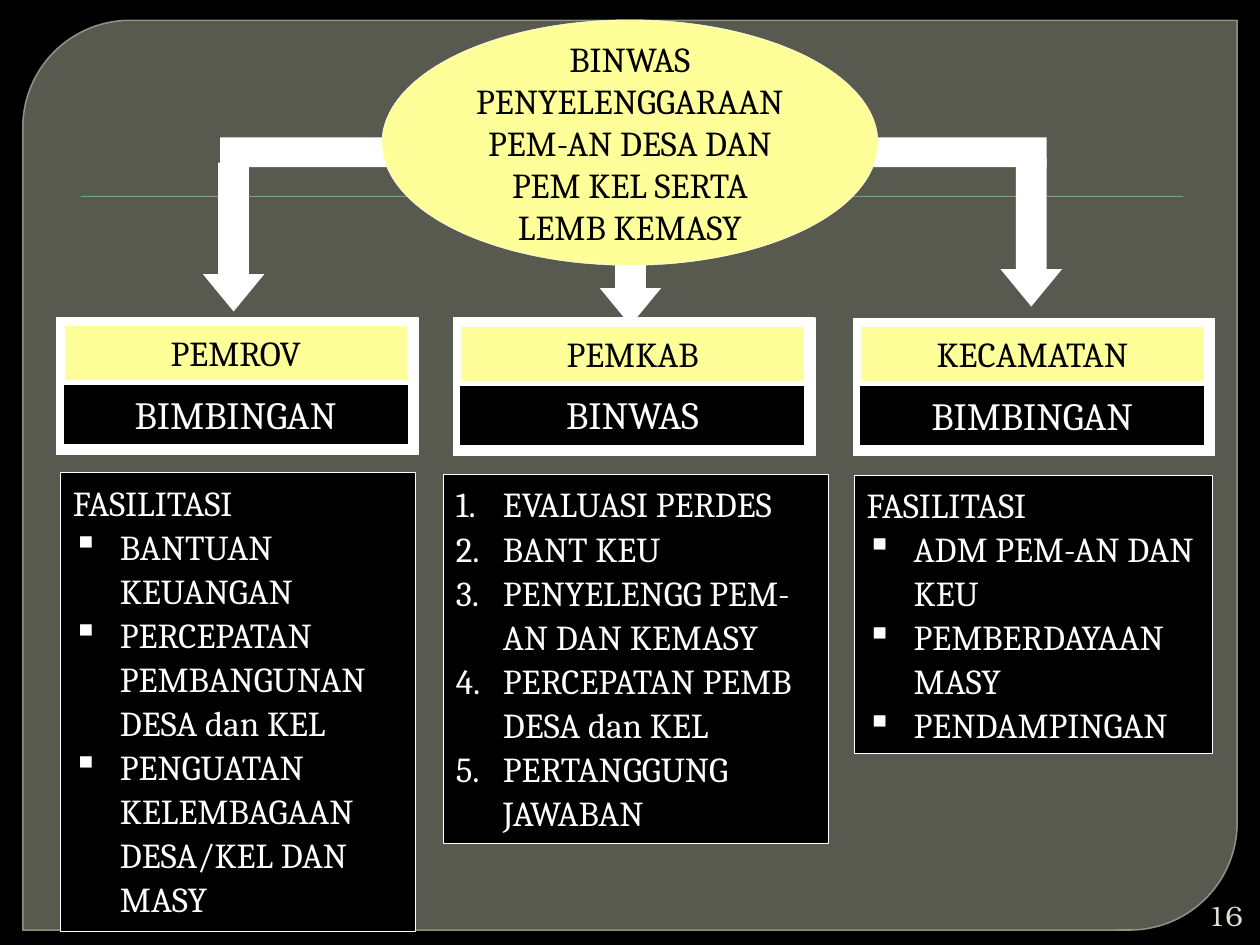
from lxml import etree
from pptx import Presentation
from pptx import util as u
from pptx.dml.color import RGBColor
from pptx.enum import shapes, text
from pptx.oxml.ns import qn

THEME = {
    "black": "000000", "white": "FFFFFF", "yellow": "FFFF99",
    "panel": "888B7B", "panel_line": "9DA090", "rule": "72A376", "number": "E0E0D4",
    "font": "Cambria", "number_font": "TeX Gyre Bonum",
    "body": 20, "role": 22, "number_size": 16,
}

# Content; geometry in centimetres
TOPIC = "BINWAS PENYELENGGARAAN PEM-AN DESA DAN PEM KEL SERTA LEMB KEMASY"
PAGE_NUMBER = "16"
COLUMNS = [
    {"level": "PEMROV", "role": "BIMBINGAN", "heading": "FASILITASI", "list": "bullet",
     "items": ["BANTUAN KEUANGAN", "PERCEPATAN PEMBANGUNAN DESA dan KEL",
               "PENGUATAN KELEMBAGAAN DESA/KEL DAN MASY"],
     "card": (1.14, 6.4), "arrow": (4.09, 3.28), "panel": (1.22, 9.53, 7.16, 9.25)},
    {"level": "PEMKAB", "role": "BINWAS", "heading": None, "list": "number",
     "items": ["EVALUASI PERDES", "BANT KEU", "PENYELENGG PEM-AN DAN KEMASY",
               "PERCEPATAN PEMB DESA dan KEL", "PERTANGGUNG JAWABAN"],
     "card": (9.14, 6.41), "arrow": (12.09, 3.56), "panel": (8.94, 9.57, 7.75, 7.44)},
    {"level": "KECAMATAN", "role": "BIMBINGAN", "heading": "FASILITASI", "list": "bullet",
     "items": ["ADM PEM-AN DAN KEU", "PEMBERDAYAAN MASY", "PENDAMPINGAN"],
     "card": (17.2, 6.42), "arrow": (20.17, 3.18), "panel": (17.22, 9.58, 7.21, 5.61)},
]
CARD_SIZE = (7.29, 2.77)
ARROW_SIZE = (1.24, 3.0)
INDENT = 0.95

SHAPE = shapes.MSO_SHAPE
ALIGN = text.PP_ALIGN
ANCHOR = text.MSO_ANCHOR


def color(name):
    return RGBColor.from_string(THEME[name])


def set_alpha(color_format_owner, percent):
    """Give the solid colour inside an element an opacity."""
    node = next(color_format_owner.iter(qn("a:srgbClr")))
    etree.SubElement(node, qn("a:alpha")).set("val", str(percent * 1000))


def add_box(slide, kind, box, fill, line=None, width=0.75):
    shape = slide.shapes.add_shape(kind, *(u.Cm(value) for value in box))
    shape.shadow.inherit = False
    shape.fill.solid()
    shape.fill.fore_color.rgb = color(fill)
    if line:
        shape.line.color.rgb = color(line)
        shape.line.width = u.Pt(width)
    else:
        shape.line.fill.background()
    return shape


def set_list(paragraph, style):
    properties = paragraph._p.get_or_add_pPr()
    properties.set("marL", str(u.Cm(INDENT)))
    properties.set("indent", str(-u.Cm(INDENT)))
    if style == "bullet":
        etree.SubElement(properties, qn("a:buChar")).set("char", "▪")
    elif style == "number":
        etree.SubElement(properties, qn("a:buAutoNum")).set("type", "arabicPeriod")


def write(shape, lines, size="body", font="font", ink="white", align=ALIGN.CENTER,
          anchor=ANCHOR.TOP, spacing=None, grow=False):
    """Write (text, list style) lines; the style "plain" only hangs the indent."""
    frame = shape.text_frame
    frame.word_wrap = True
    frame.vertical_anchor = anchor
    if grow:
        frame.auto_size = text.MSO_AUTO_SIZE.SHAPE_TO_FIT_TEXT
    for index, (words, style) in enumerate(lines):
        paragraph = frame.add_paragraph() if index else frame.paragraphs[0]
        paragraph.alignment = align
        if spacing:
            paragraph.line_spacing = spacing
        if style:
            set_list(paragraph, style)
        run = paragraph.add_run()
        run.text = words
        run.font.name = THEME[font]
        run.font.size = u.Pt(THEME[size])
        run.font.color.rgb = color(ink)


def add_backdrop(slide):
    slide.background.fill.solid()
    slide.background.fill.fore_color.rgb = color("black")
    backdrop = add_box(slide, SHAPE.ROUND_2_DIAG_RECTANGLE, (0.46, 0.41, 24.48, 18.64 - 0.3),
                       "panel", "panel_line", 0.87)
    backdrop.adjustments[0] = 0.118
    backdrop.adjustments[1] = 0
    properties = backdrop._element.spPr
    set_alpha(properties.find(qn("a:solidFill")), 65)
    set_alpha(properties.find(qn("a:ln")), 88)
    add_box(slide, SHAPE.RECTANGLE, (1.63, 3.95, 22.22, 0.02), "rule")


def add_card(slide, column):
    left, top = column["card"]
    add_box(slide, SHAPE.RECTANGLE, (left, top, *CARD_SIZE), "white", "white")
    level = add_box(slide, SHAPE.RECTANGLE, (left + 0.15, top + 0.16, 6.93, 1.12),
                    "yellow", "white")
    write(level, [(column["level"], None)], ink="black", grow=True)
    role = add_box(slide, SHAPE.RECTANGLE, (left + 0.13, top + 1.35, 6.96, 1.22),
                   "black", "white")
    write(role, [(column["role"], None)], size="role", grow=True)


def add_panel(slide, column):
    panel = add_box(slide, SHAPE.RECTANGLE, column["panel"], "black", "white", 0.25)
    lines = [(column["heading"], "plain")] if column["heading"] else []
    lines += [(item, column["list"]) for item in column["items"]]
    write(panel, lines, align=ALIGN.LEFT, spacing=1.05, grow=True)


def add_arrow(slide, column):
    arrow = add_box(slide, SHAPE.DOWN_ARROW, (*column["arrow"], *ARROW_SIZE), "white")
    arrow.adjustments[0] = 0.5
    arrow.adjustments[1] = 0.607


def main():
    presentation = Presentation()
    presentation.slide_width = u.Cm(25.4)
    presentation.slide_height = u.Cm(19.05)
    slide = presentation.slides.add_slide(presentation.slide_layouts[6])
    add_backdrop(slide)

    # Cards and task panels
    for column in COLUMNS:
        add_card(slide, column)
        add_panel(slide, column)

    # Branches from the topic to each card
    add_box(slide, SHAPE.RECTANGLE, (4.44, 2.77, 16.66, 0.6), "white")
    for column in COLUMNS:
        add_arrow(slide, column)

    # Topic
    topic = add_box(slide, SHAPE.OVAL, (7.7, 0.4, 10.0, 4.95), "yellow", "white", 0.25)
    write(topic, [(TOPIC, None)], ink="black", anchor=ANCHOR.MIDDLE)

    # Page number
    number = slide.shapes.add_textbox(u.Cm(24), u.Cm(18.08), u.Cm(1.3), u.Cm(0.76))
    write(number, [(PAGE_NUMBER, None)], size="number_size", font="number_font",
          ink="number", align=ALIGN.RIGHT, anchor=ANCHOR.MIDDLE)
    presentation.save("out.pptx")


if __name__ == "__main__":
    main()
